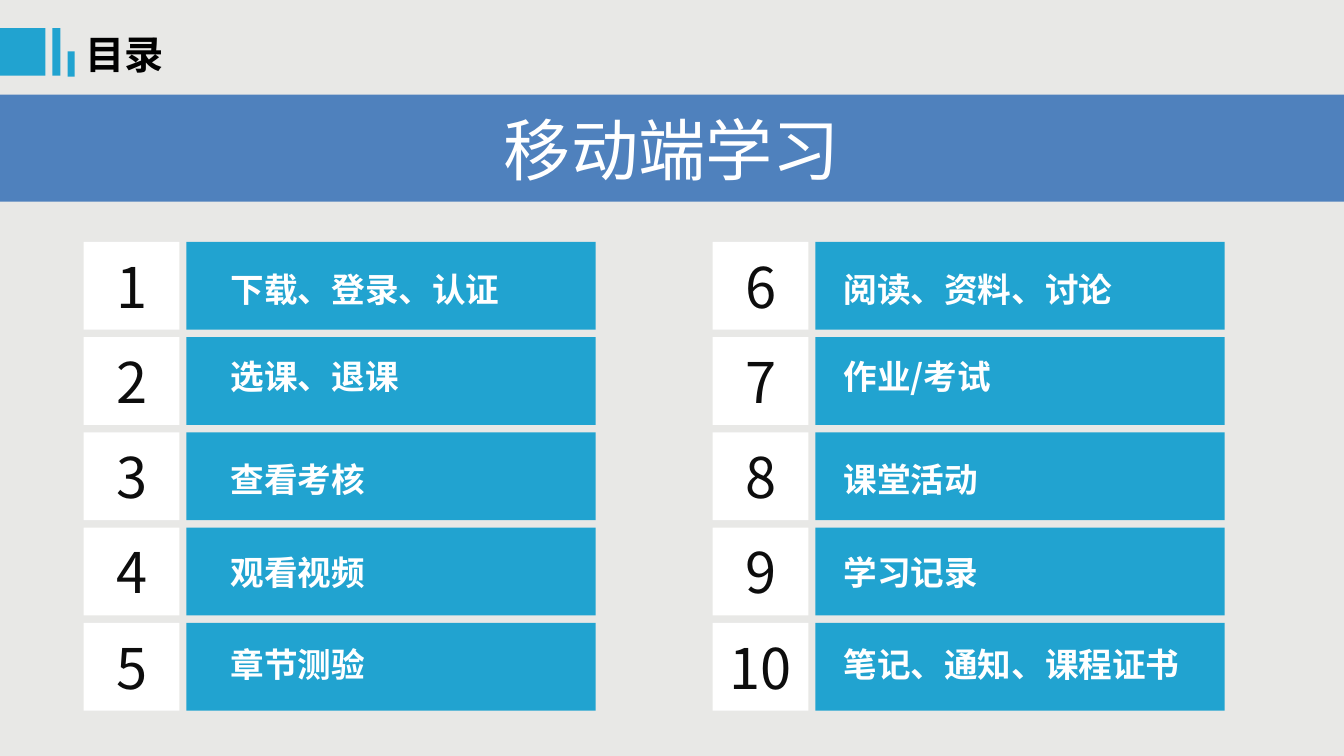
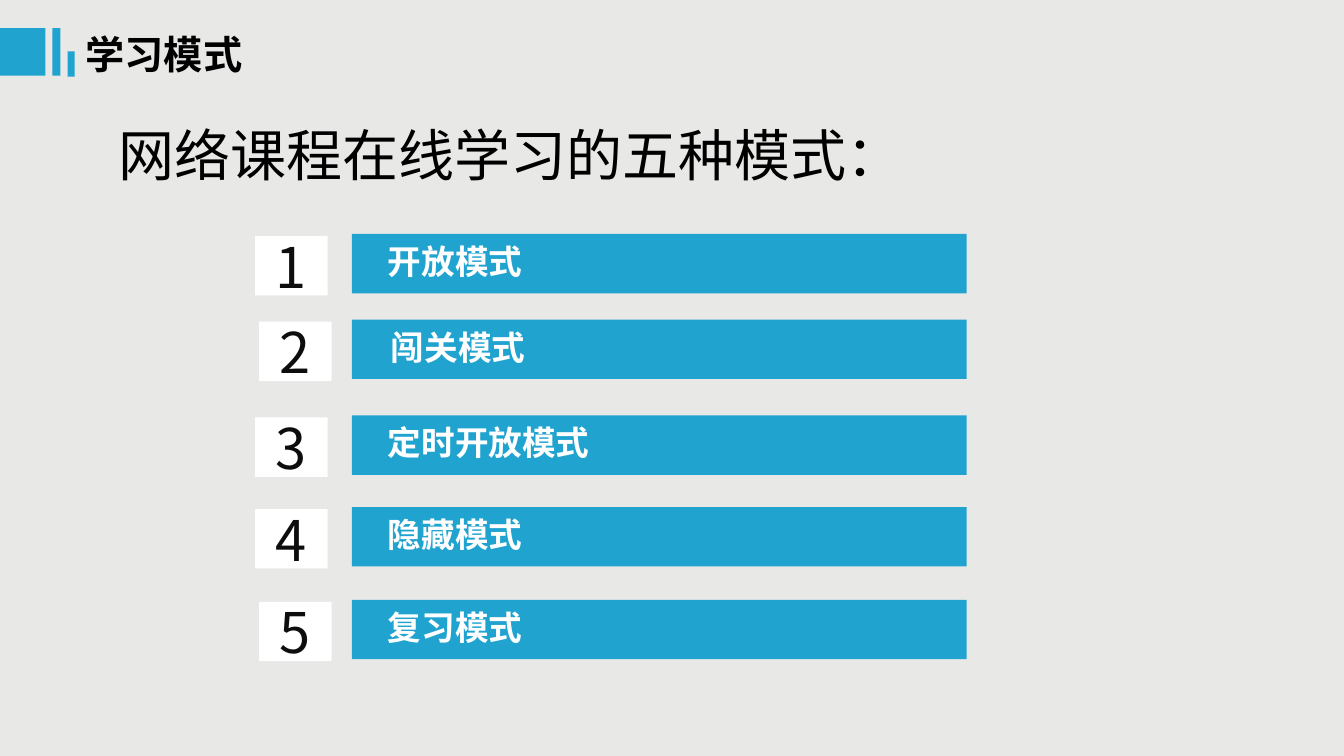
from lxml import etree
from pptx import Presentation
from pptx.dml.color import RGBColor
from pptx.enum.shapes import MSO_SHAPE
from pptx.enum.text import MSO_ANCHOR, MSO_AUTO_SIZE, PP_ALIGN
from pptx.oxml.ns import qn
from pptx.util import Inches, Pt

RECTANGLE = MSO_SHAPE.RECTANGLE
TOP, MIDDLE = MSO_ANCHOR.TOP, MSO_ANCHOR.MIDDLE
LEFT, CENTER = PP_ALIGN.LEFT, PP_ALIGN.CENTER
GROW = MSO_AUTO_SIZE.SHAPE_TO_FIT_TEXT
TITLE_ONLY = 5

# Grid cells are a tenth of an inch square
CELL = 0.1
COLUMNS, ROWS = 133.33, 75


def color(hex_string):
    return RGBColor.from_string(hex_string)


class Deck:
    """Holds the shared style and the slide being built."""

    BACKGROUND, ACCENT, BAND = "E8E8E6", "21A3D0", "4F81BD"
    WHITE, BLACK, NUMBER = "FFFFFF", "000000", "0D0D0D"
    FONT, PLAIN_FONT = "Noto Sans CJK SC", "Calibri"
    TITLE_MARKS = ((0, 2.8, 4.5, 4.7), (5.2, 2.8, 0.8, 4.7), (6.7, 5.1, 0.7, 2.5))

    def __init__(self):
        self.presentation = Presentation()
        self.presentation.slide_width = self.cells(COLUMNS)
        self.presentation.slide_height = self.cells(ROWS)
        self.slide = None

    @staticmethod
    def cells(count):
        return Inches(count * CELL)

    def place(self, box):
        return [self.cells(length) for length in box]

    def fill_text(self, shape, text, size, hex_string, bold=False, font=FONT,
                  align=LEFT, anchor=TOP):
        frame = shape.text_frame
        frame.word_wrap = True
        frame.vertical_anchor = anchor
        paragraph = frame.paragraphs[0]
        paragraph.alignment = align
        run = paragraph.add_run()
        run.text = text
        run.font.size = Pt(size)
        run.font.bold = bold
        run.font.name = font
        run.font.color.rgb = color(hex_string)
        # Chinese characters take the East Asian typeface
        east_asian = etree.SubElement(run._r.get_or_add_rPr(), qn("a:ea"))
        east_asian.set("typeface", self.FONT)

    def add_slide(self, title, title_width):
        layout = self.presentation.slide_layouts[TITLE_ONLY]
        self.slide = self.presentation.slides.add_slide(layout)
        background = self.slide.background.fill
        background.solid()
        background.fore_color.rgb = color(self.BACKGROUND)
        for mark in self.TITLE_MARKS:
            self.rectangle(mark, self.ACCENT)
        shape = self.slide.shapes.title
        shape.left, shape.top, shape.width, shape.height = self.place(
            (7.5, 2.5, title_width, 5.7))
        self.fill_text(shape, title, 28, self.BLACK, bold=True)
        shape.text_frame.auto_size = GROW

    def rectangle(self, box, fill):
        shape = self.slide.shapes.add_shape(RECTANGLE, *self.place(box))
        shape.shadow.inherit = False
        shape.fill.solid()
        shape.fill.fore_color.rgb = color(fill)
        shape.line.fill.background()
        return shape

    def text(self, box, text, size, hex_string, **style):
        shape = self.slide.shapes.add_textbox(*self.place(box))
        self.fill_text(shape, text, size, hex_string, **style)
        shape.text_frame.auto_size = GROW

    def band(self, box, text):
        self.fill_text(self.rectangle(box, self.BAND), text, 48, self.WHITE,
                       align=CENTER, anchor=MIDDLE)

    def entry(self, number, label, number_box, bar_box, label_left, label_top):
        """A numbered tile, a bar and the label on the bar."""
        bar_left, _, bar_width, _ = bar_box
        self.rectangle(bar_box, self.ACCENT)
        self.fill_text(self.rectangle(number_box, self.WHITE), str(number), 40,
                       self.NUMBER, align=CENTER, anchor=MIDDLE)
        label_width = bar_left + bar_width - label_left
        self.text((label_left, label_top, label_width, 5), label, 24,
                  self.WHITE, bold=True)


def build_contents(deck):
    deck.add_slide("目录", 11.5)
    deck.band((0, 9.4, COLUMNS, 10.6), "移动端学习")

    # Two columns of five entries: tile left, label left, labels
    columns = (
        (8.3, 21.9, ("下载、登录、认证", "选课、退课", "查看考核", "观看视频", "章节测验")),
        (70.7, 82.7, ("阅读、资料、讨论", "作业/考试", "课堂活动", "学习记录",
                      "笔记、通知、课程证书")),
    )
    label_tops = (26.2, 34.8, 45, 54.3, 63.4)
    first_top, pitch, height = 24, 9.45, 8.7
    number = 1
    for left, label_left, labels in columns:
        for row, label in enumerate(labels):
            top = first_top + row * pitch
            deck.entry(number, label, (left, top, 9.5, height),
                       (left + 10.2, top, 40.6, height), label_left, label_tops[row])
            number += 1


def build_modes(deck):
    deck.add_slide("学习模式", 26.1)
    deck.text((10.8, 11.5, 102.5, 7.7), "网络课程在线学习的五种模式：", 40,
              deck.BLACK, font=deck.PLAIN_FONT)

    # Label, bar top, tile left, label left
    modes = (
        ("开放模式", 23.2, 25.3, 37.5),
        ("闯关模式", 31.7, 25.7, 37.8),
        ("定时开放模式", 41.2, 25.3, 37.5),
        ("隐藏模式", 50.3, 25.3, 37.5),
        ("复习模式", 59.5, 25.7, 37.5),
    )
    height, drop = 5.9, 0.2
    for number, (label, top, left, label_left) in enumerate(modes, 1):
        deck.entry(number, label, (left, top + drop, 7.2, height),
                   (34.9, top, 61, height), label_left, top + drop)


def main():
    deck = Deck()
    build_contents(deck)
    build_modes(deck)
    deck.presentation.save("out.pptx")


if __name__ == "__main__":
    main()
